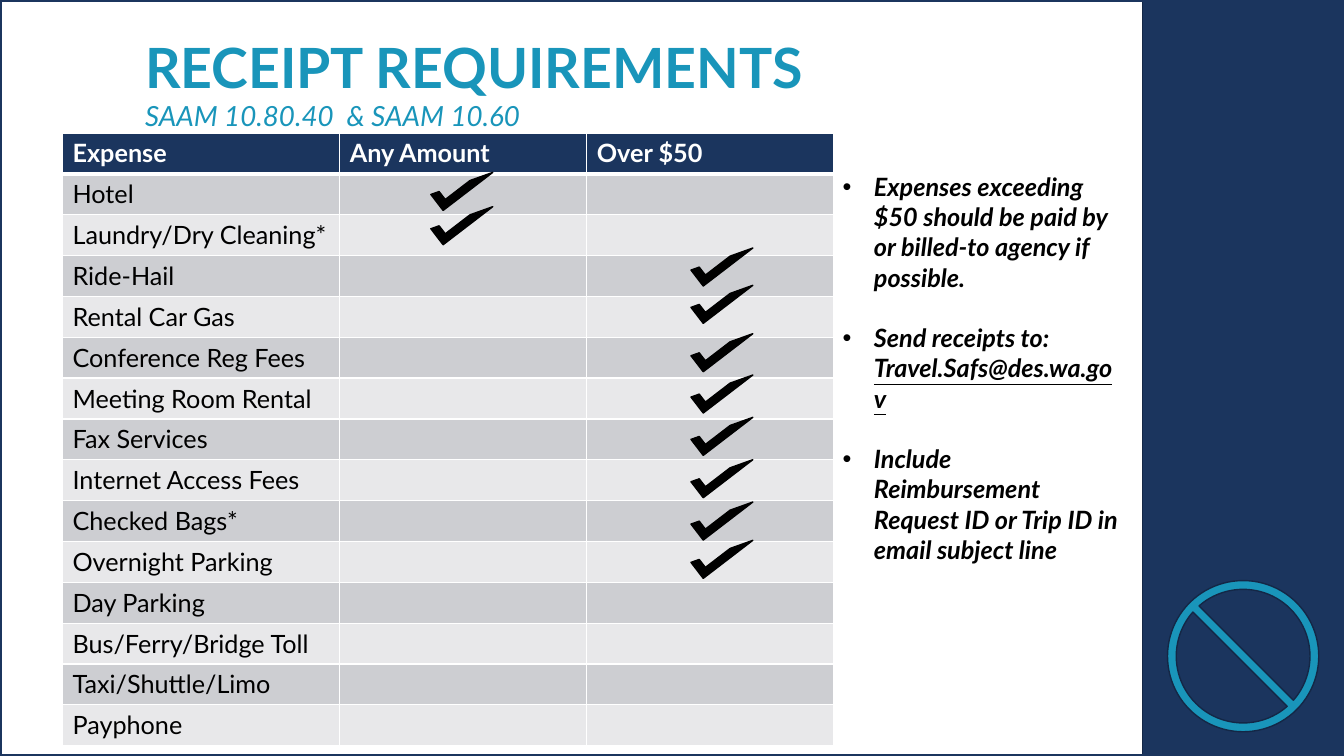
from lxml.etree import SubElement
from pptx import Presentation
from pptx.dml.color import RGBColor
from pptx.enum.shapes import MSO_SHAPE as Preset
from pptx.enum.text import MSO_ANCHOR as Anchor
from pptx.oxml.ns import qn
from pptx.util import Pt

EMU_PER_PX = 9144  # 100 px to the inch
FONT = "Lato"
COLORS = {
    "navy": "1B355E",
    "edge": "142746",
    "teal": "1995BA",
    "white": "FFFFFF",
    "black": "000000",
    "dark_band": "CDCED2",
    "light_band": "E8E8EA",
}
HEADINGS = ["Expense", "Any Amount", "Over $50"]
EXPENSES = [
    "Hotel", "Laundry/Dry Cleaning*", "Ride-Hail", "Rental Car Gas",
    "Conference Reg Fees", "Meeting Room Rental", "Fax Services",
    "Internet Access Fees", "Checked Bags*", "Overnight Parking",
    "Day Parking", "Bus/Ferry/Bridge Toll", "Taxi/Shuttle/Limo", "Payphone",
]
COLUMN_WIDTHS = [275, 245, 245]
CHECK_TOPS = {
    427: [172, 206],
    685: [247, 284, 332, 373, 415, 457, 499, 537],
}
# Each note is a list of (text, underlined) runs.
NOTES = [
    [("Expenses exceeding $50 should be paid by or billed-to agency if possible.", False)],
    [("Send receipts to: ", False), ("Travel.Safs@des.wa.gov", True)],
    [("Include Reimbursement Request ID or Trip ID in email subject line", False)],
]


def px(length):
    return length * EMU_PER_PX


def rgb(name):
    return RGBColor.from_string(COLORS[name])


def add_span(para, text, size, color, bold=False, italic=False, underline=False):
    span = para.add_run()
    span.text = text
    font = span.font
    font.name, font.size = FONT, Pt(size)
    font.bold, font.italic, font.underline = bold, italic, underline
    font.color.rgb = rgb(color)


def add_preset(slide, preset, place, fill, line, line_width=1, adjustments=()):
    shape = slide.shapes.add_shape(preset, *map(px, place))
    shape.shadow.inherit = False
    for index, value in enumerate(adjustments):
        shape.adjustments[index] = value
    if fill:
        shape.fill.solid()
        shape.fill.fore_color.rgb = rgb(fill)
    else:
        shape.fill.background()
    shape.line.color.rgb = rgb(line)
    shape.line.width = Pt(line_width)
    return shape


def add_text_box(slide, place):
    frame = slide.shapes.add_textbox(*map(px, place)).text_frame
    frame.word_wrap = True
    return frame


def add_title(slide):
    frame = add_text_box(slide, (134, 42, 1066, 80))
    frame.vertical_anchor = Anchor.MIDDLE
    para = frame.paragraphs[0]
    add_span(para, "RECEIPT REQUIREMENTS", 39.6, "teal", bold=True)
    para.add_line_break()
    add_span(para, "SAAM 10.80.40  & SAAM 10.60", 19.8, "teal", italic=True)


def set_borders(cell, top, bottom):
    """Draw white borders; top and bottom are widths in points."""
    properties = cell._tc.get_or_add_tcPr()
    for side, width in (("L", 1), ("R", 1), ("T", top), ("B", bottom)):
        line = SubElement(properties, qn(f"a:ln{side}"), w=str(Pt(width)))
        fill = SubElement(line, qn("a:solidFill"))
        SubElement(fill, qn("a:srgbClr"), val=COLORS["white"])


def fill_cell(cell, text, row):
    header = row == 0
    set_borders(cell, top=3 if row == 1 else 1, bottom=3 if header else 1)
    band = "dark_band" if row % 2 else "light_band"
    cell.fill.solid()
    cell.fill.fore_color.rgb = rgb("navy" if header else band)
    if text:
        add_span(cell.text_frame.paragraphs[0], text, 18,
                 "white" if header else "black", bold=header)


def add_expense_table(slide):
    rows = [HEADINGS] + [[expense, "", ""] for expense in EXPENSES]
    place = (62, 132, sum(COLUMN_WIDTHS), 608)
    table = slide.shapes.add_table(len(rows), len(HEADINGS), *map(px, place)).table
    for column, width in zip(table.columns, COLUMN_WIDTHS):
        column.width = px(width)
    for row, texts in enumerate(rows):
        table.rows[row].height = px(608) // len(rows)
        for column, text in enumerate(texts):
            fill_cell(table.cell(row, column), text, row)


def add_check(slide, left, top):
    """Turn a flipped half frame into a check mark."""
    check = add_preset(slide, Preset.HALF_FRAME, (left, top, 62, 20),
                       "black", "black", adjustments=(0.367, 0.415))
    check.rotation = 322.5
    check._element.spPr.find(qn("a:xfrm")).set("flipV", "1")


def add_bullet(para):
    properties = para._p.get_or_add_pPr()
    properties.set("marL", str(px(31)))
    properties.set("indent", str(-px(31)))
    SubElement(properties, qn("a:buFont"), typeface="Arial")
    SubElement(properties, qn("a:buChar"), char="•")


def add_notes_list(slide):
    frame = add_text_box(slide, (826, 165, 295, 404))
    for index, note in enumerate(NOTES):
        para = frame.add_paragraph() if index else frame.paragraphs[0]
        add_bullet(para)
        if index:
            para.space_before = Pt(21.6)
        for text, underline in note:
            add_span(para, text, 18, "black", bold=True, italic=True,
                     underline=underline)


def main():
    deck = Presentation()
    deck.slide_width, deck.slide_height = px(1333), px(750)
    slide = deck.slides.add_slide(deck.slide_layouts[6])
    add_preset(slide, Preset.RECTANGLE, (1133, 0, 200, 750), "navy", "edge")
    add_title(slide)
    add_preset(slide, Preset.RECTANGLE, (0, 0, 1333, 750), None, "navy", line_width=3)
    add_preset(slide, Preset.NO_SYMBOL, (1158, 576, 150, 150), "teal", "edge",
               adjustments=(0.058,))
    add_expense_table(slide)
    for left, tops in CHECK_TOPS.items():
        for top in tops:
            add_check(slide, left, top)
    add_notes_list(slide)
    deck.save("out.pptx")


if __name__ == "__main__":
    main()
